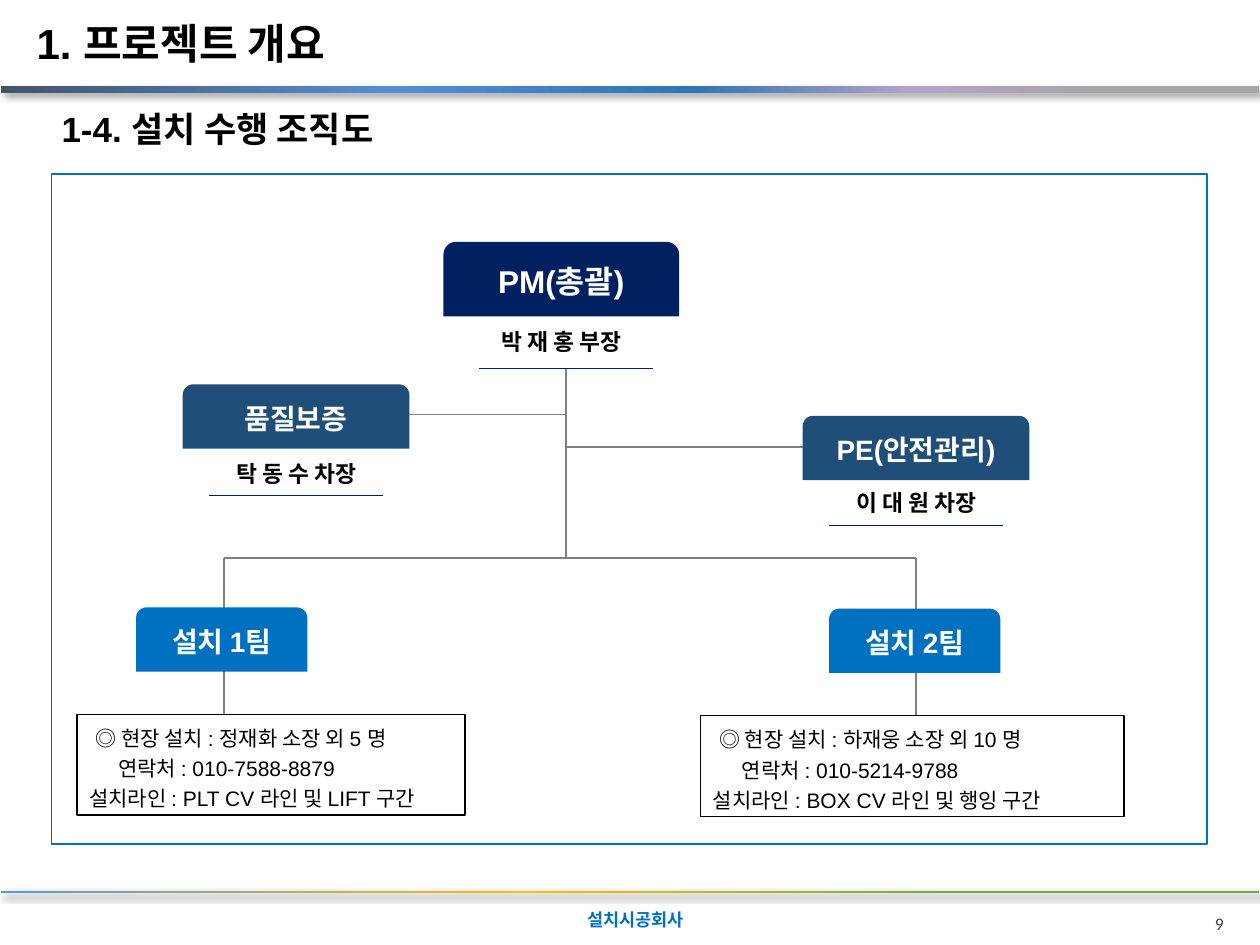
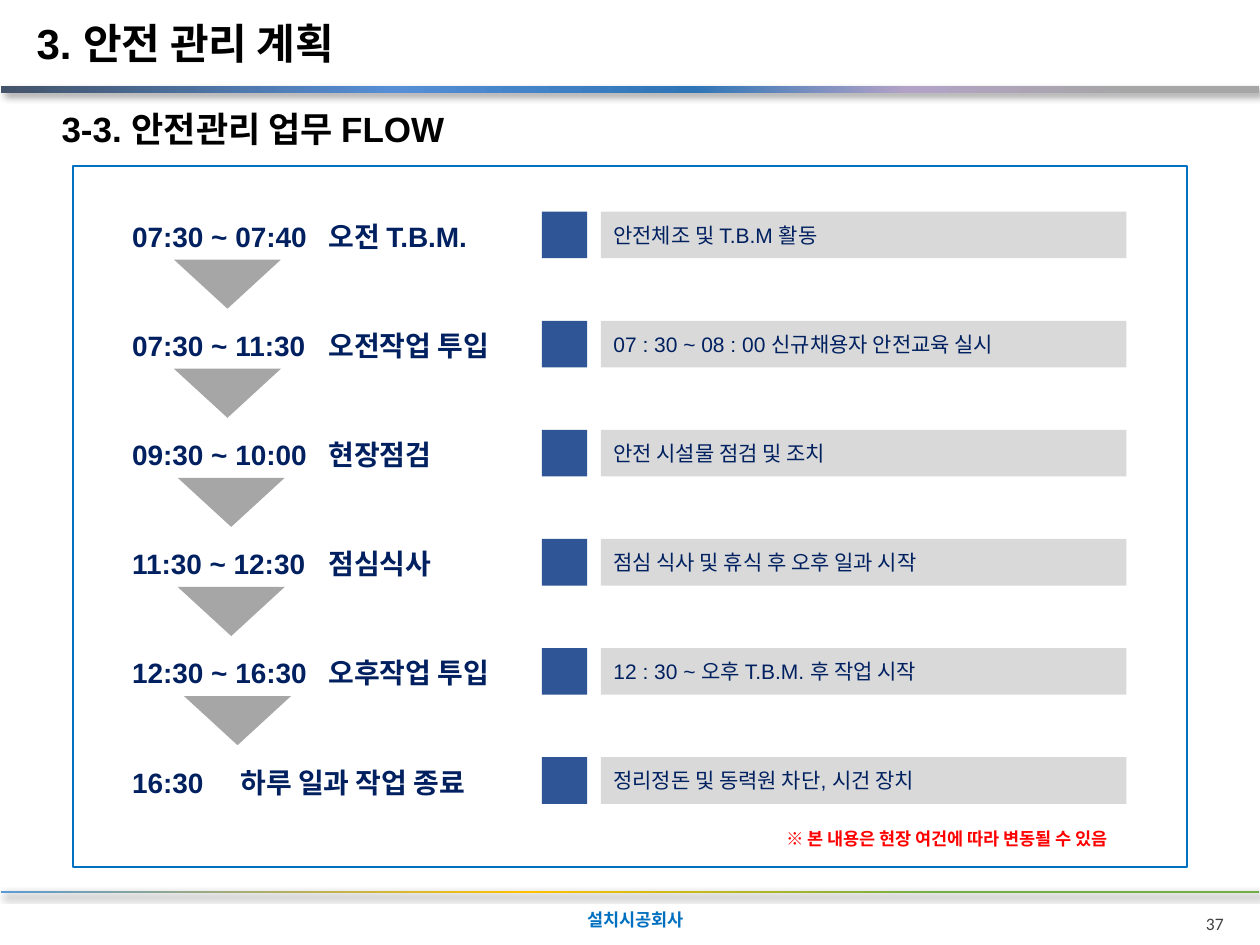
from lxml.etree import SubElement
from pptx import Presentation
from pptx.dml.color import RGBColor
from pptx.enum.shapes import MSO_CONNECTOR, MSO_SHAPE
from pptx.enum.text import MSO_ANCHOR, MSO_AUTO_SIZE, PP_ALIGN
from pptx.oxml import parse_xml
from pptx.oxml.ns import nsdecls, qn
from pptx.util import Inches, Pt

# Shared look
LATIN, KOREAN = "Arial", "Noto Sans CJK KR"
NAVY, DEEP, BLUE, GRAY = "002060", "1F4E79", "0070C0", "808080"
BLACK, WHITE = "000000", "FFFFFF"
TOP_STOPS = [(0, "44546A"), (31, "558ED5"), (55, "2E75B6"), (72, "B3A2C7"), (90, "A6A6A6")]
END_STOPS = [(0, "5B9BD5"), (42, "FFC000"), (75, "70AD47")]
ALIGN = {"l": PP_ALIGN.LEFT, "c": PP_ALIGN.CENTER, "r": PP_ALIGN.RIGHT}
RECT, ROUND = MSO_SHAPE.RECTANGLE, MSO_SHAPE.ROUND_2_SAME_RECTANGLE


def rgb(code):
    return RGBColor.from_string(code)


def write(shape, text, size=12, color=BLACK, bold=False, align="l", font=LATIN,
          anchor=MSO_ANCHOR.MIDDLE, space=None, pad=(0.1, 0.05), marks=(), tab=None):
    """Fill a shape with text; marks holds the left indent of each line."""
    frame = shape.text_frame
    frame.word_wrap, frame.auto_size = True, MSO_AUTO_SIZE.NONE
    frame.vertical_anchor = anchor
    frame.margin_left = frame.margin_right = Inches(pad[0])
    frame.margin_top = frame.margin_bottom = Inches(pad[1])
    for i, line in enumerate(text.split("\n")):
        par = frame.add_paragraph() if i else frame.paragraphs[0]
        par.alignment = ALIGN[align]
        if space:
            par.line_spacing = space
        props = par._p.get_or_add_pPr()
        if marks:
            props.set("marL", str(Inches(marks[i])))
        if tab:
            stops = SubElement(props, qn("a:tabLst"))
            SubElement(stops, qn("a:tab"), pos=str(Inches(tab)), algn="l")
        run = par.add_run()
        run.text = line
        run.font.size, run.font.bold, run.font.name = Pt(size), bold, font
        run.font.color.rgb = rgb(color)
        SubElement(run._r.get_or_add_rPr(), qn("a:ea"), typeface=KOREAN)


def label(slide, text, x, y, w, h, **look):
    box = slide.shapes.add_textbox(Inches(x), Inches(y), Inches(w), Inches(h))
    write(box, text, **look)


def block(slide, kind, x, y, w, h, fill=None, edge=None):
    shape = slide.shapes.add_shape(kind, Inches(x), Inches(y), Inches(w), Inches(h))
    shape.shadow.inherit = False
    if fill:
        shape.fill.solid()
        shape.fill.fore_color.rgb = rgb(fill)
    else:
        shape.fill.background()
    if edge:
        shape.line.color.rgb = rgb(edge)
        shape.line.width = Pt(1)
    else:
        shape.line.fill.background()
    return shape


def line(slide, x1, y1, x2, y2, color=GRAY, width=1):
    link = slide.shapes.add_connector(
        MSO_CONNECTOR.STRAIGHT, Inches(x1), Inches(y1), Inches(x2), Inches(y2))
    link.line.color.rgb = rgb(color)
    link.line.width = Pt(width)
    SubElement(link._element.spPr, qn("a:effectLst"))


def band(slide, y, h, stops):
    """Full-width gradient rule with a soft shadow."""
    bar = block(slide, RECT, 0.01, y, 9.98, h)
    props = bar._element.spPr
    marks = "".join(f'<a:gs pos="{pos * 1000}"><a:srgbClr val="{code}"/></a:gs>'
                    for pos, code in stops)
    grad = parse_xml(f'<a:gradFill {nsdecls("a")}><a:gsLst>{marks}</a:gsLst>'
                     '<a:lin ang="0" scaled="0"/></a:gradFill>')
    props.replace(props.find(qn("a:noFill")), grad)
    props.find(qn("a:effectLst")).append(parse_xml(
        f'<a:outerShdw {nsdecls("a")} blurRad="{Pt(4)}" dist="{Pt(3)}" dir="2700000">'
        f'<a:srgbClr val="{BLACK}"><a:alpha val="40000"/></a:srgbClr></a:outerShdw>'))


def page(deck, title, topic, number):
    slide = deck.slides.add_slide(deck.slide_layouts[5])
    head = slide.shapes.title
    head.left, head.top = Inches(0.19), Inches(0)
    head.width, head.height = Inches(3.68), Inches(0.67)
    write(head, title, size=24, bold=True)
    band(slide, 0.68, 0.06, TOP_STOPS)
    band(slide, 7.07, 0.02, END_STOPS)
    label(slide, "설치시공회사", 4.63, 7.14, 2.18, 0.32, size=10, color=BLUE,
          bold=True, font=KOREAN, pad=(0.03, 0.03))
    label(slide, number, 8.54, 7.2, 1.27, 0.21, size=10, color="404040",
          align="r", font="Calibri", anchor=MSO_ANCHOR.TOP)
    label(slide, topic, 0.39, 0.8, 3.6, 0.44, size=20, bold=True)
    return slide


def role(slide, text, x, y, w, h, fill, size=16):
    box = block(slide, ROUND, x, y, w, h, fill)
    write(box, text, size=size, color=WHITE, bold=True, align="c")


def person(slide, name, x, y, w, mid, base):
    """Name with a thin rule below, centred on mid."""
    label(slide, name, x, y, w, 0.34, size=13, bold=True, align="c")
    line(slide, mid - 0.69, base, mid + 0.69, base, NAVY, 0.25)


def team(slide, name, x, y, note, left, width, stem):
    line(slide, stem, 4.43, stem, y + 0.85)
    role(slide, name, x, y, 1.36, 0.51, BLUE)
    box = block(slide, RECT, left, y + 0.85, width, 0.8, edge=BLACK)
    write(box, note, space=1.2, anchor=MSO_ANCHOR.TOP, marks=(0.05, 0.23, 0))


def chart(deck):
    slide = page(deck, "1. 프로젝트 개요", "1-4. 설치 수행 조직도", "9")
    # Links
    trunk, left, right = 4.49, 1.78, 7.27
    line(slide, trunk, 2.92, trunk, 4.43)
    line(slide, left, 4.43, right, 4.43)
    line(slide, trunk, 3.55, 6.52, 3.55)
    line(slide, 3.24, 3.29, trunk, 3.29)
    block(slide, RECT, 0.41, 1.38, 9.17, 5.32, edge=BLUE)
    # Leads
    role(slide, "PM(총괄)", 3.52, 1.92, 1.87, 0.59, NAVY, 18)
    role(slide, "품질보증", 1.45, 3.05, 1.8, 0.51, DEEP)
    role(slide, "PE(안전관리)", 6.37, 3.3, 1.8, 0.51, DEEP)
    person(slide, "박 재 홍 부장", 3.52, 2.54, 1.87, trunk, 2.92)
    person(slide, "탁 동 수 차장", 1.45, 3.59, 1.8, 2.35, 3.93)
    person(slide, "이 대 원 차장", 6.37, 3.82, 1.8, 7.27, 4.17)
    # Teams
    team(slide, "설치 1팀", 1.08, 4.82,
         "◎ 현장 설치 : 정재화 소장 외 5 명\n연락처 : 010-7588-8879\n"
         "설치라인 : PLT CV 라인 및 LIFT 구간", 0.61, 3.08, left)
    team(slide, "설치 2팀", 6.58, 4.83,
         "◎ 현장 설치 : 하재웅 소장 외 10 명\n연락처 : 010-5214-9788\n"
         "설치라인 : BOX CV 라인 및 행잉 구간", 5.56, 3.36, right)


def flow(deck):
    slide = page(deck, "3. 안전 관리 계획", "3-3. 안전관리 업무 FLOW", "37")
    block(slide, RECT, 0.58, 1.32, 8.84, 5.56, edge=BLUE)
    # Time, step, detail, arrow position
    steps = [
        ("07:30 ~ 07:40", "오전 T.B.M.", "안전체조 및 T.B.M 활동", 1.38),
        ("07:30 ~ 11:30", "오전작업 투입", "07 : 30 ~ 08 : 00 신규채용자 안전교육 실시", 1.38),
        ("09:30 ~ 10:00", "현장점검", "안전 시설물 점검 및 조치", 1.41),
        ("11:30 ~ 12:30", "점심식사", "점심 식사 및 휴식 후 오후 일과 시작", 1.41),
        ("12:30 ~ 16:30", "오후작업 투입", "12 : 30 ~ 오후 T.B.M. 후 작업 시작", 1.46),
        ("16:30", "하루 일과 작업 종료", "정리정돈 및 동력원 차단, 시건 장치", None),
    ]
    pitch = (6.01 - 1.68) / (len(steps) - 1)
    for i, (time, step, detail, arrow) in enumerate(steps):
        y = 1.68 + i * pitch
        label(slide, f"{time}\t{step}", 0.95, y + 0.01, 3.25, 0.37, size=16,
              color=NAVY, bold=True, tab=1.56 if "~" in time else 0.86)
        block(slide, RECT, 4.3, y, 0.36, 0.37, "2F5597")
        bar = block(slide, RECT, 4.77, y, 4.17, 0.37, "D9D9D9")
        write(bar, detail, color=NAVY)
        if arrow:
            tip = block(slide, MSO_SHAPE.ISOSCELES_TRIANGLE, arrow, y + 0.38, 0.85, 0.39, "A6A6A6")
            tip.rotation = 180
    label(slide, "※ 본 내용은 현장 여건에 따라 변동될 수 있음", 5.61, 6.49, 3.81, 0.3,
          size=10, color="FF0000", bold=True, align="c", font=KOREAN, space=1.2)


def main():
    deck = Presentation()
    deck.slide_width, deck.slide_height = Inches(10), Inches(7.5)
    chart(deck)
    flow(deck)
    deck.save("out.pptx")


if __name__ == "__main__":
    main()
